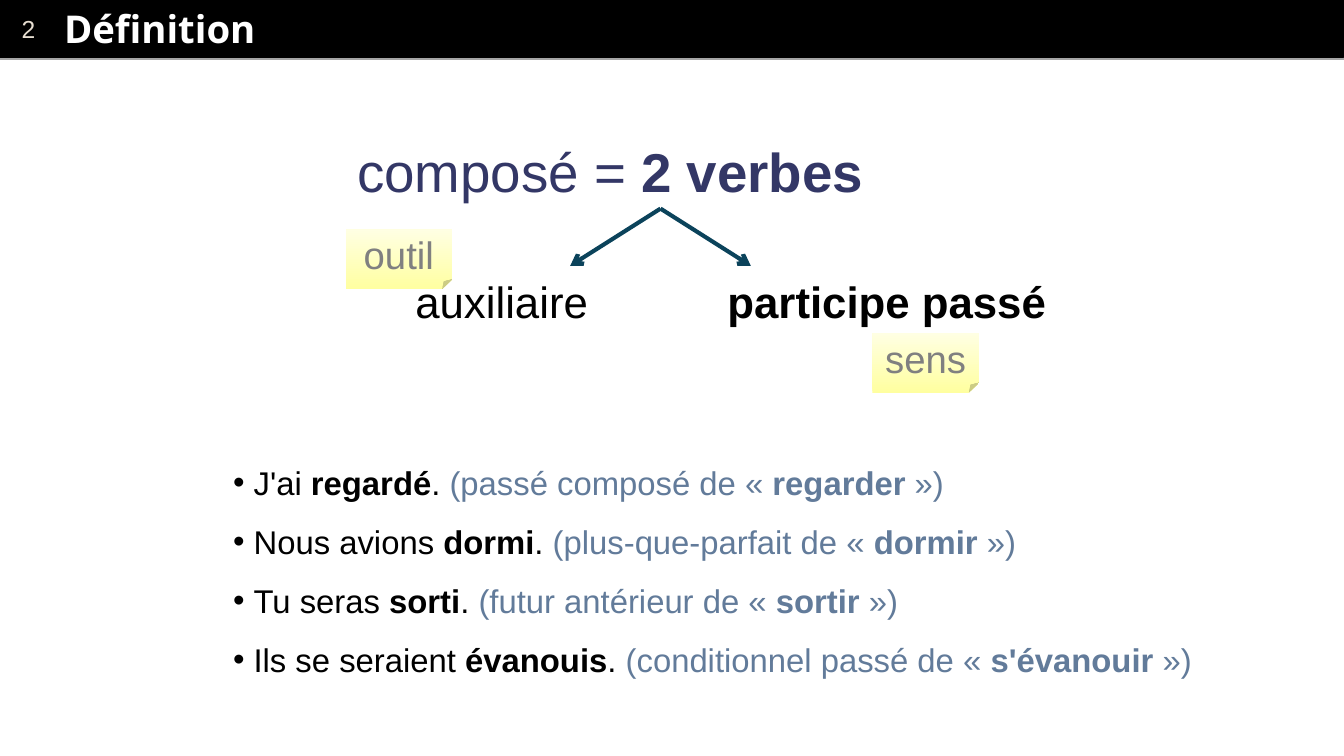
from dataclasses import dataclass

from lxml.etree import SubElement
from pptx import Presentation
from pptx.dml.color import RGBColor
from pptx.enum.shapes import MSO_CONNECTOR, MSO_SHAPE
from pptx.enum.text import MSO_ANCHOR, PP_ALIGN
from pptx.oxml.ns import qn
from pptx.util import Pt

TITLE = "Définition"
PAGE_NUMBER = "2"
FORMULA = [("composé = ", False), ("2 verbes", True)]
BRANCHES = [("auxiliaire", False, 296.6, 142), ("participe passé", True, 524.9, 249)]
NOTES = [("sens", 637.9, 243.4), ("outil", 252.7, 167.8)]
EXAMPLES = [
    ("J'ai ", "regardé", "passé composé", "regarder"),
    ("Nous avions ", "dormi", "plus-que-parfait", "dormir"),
    ("Tu seras ", "sorti", "futur antérieur", "sortir"),
    ("Ils se seraient ", "évanouis", "conditionnel passé", "s'évanouir"),
]
SLIDE_WIDTH, SLIDE_HEIGHT = 982.8, 553
BAR_HEIGHT = 41.8
FORK_X, FORK_TOP, FORK_BOTTOM, FORK_REACH = 483, 152.6, 194.4, 66
NOTE_SIZE = (77.8, 43.9)
BULLET_INDENT = 15


@dataclass(frozen=True)
class Theme:
    """Colours, fonts and type sizes of the slide."""

    black: str = "000000"
    white: str = "FFFFFF"
    number: str = "E7DED1"
    rule: str = "A6A6A6"
    formula: str = "333766"
    arrow: str = "0B435B"
    note_text: str = "808080"
    note_dark: str = "FFFFA0"
    note_light: str = "FFFFE3"
    comment: str = "627B9A"
    body_font: str = "Arial"
    title_font: str = "Open Sans"
    number_size: int = 18
    example_size: int = 24
    title_size: int = 28
    note_size: int = 28
    branch_size: int = 32
    formula_size: int = 40


THEME = Theme()


def rgb(value):
    """Turn a hexadecimal value into a colour."""
    return RGBColor.from_string(value)


def format_font(font, size, color, bold=False, name=THEME.body_font):
    """Set the face, size, colour and weight of a font."""
    font.name, font.size, font.bold = name, Pt(size), bold
    font.color.rgb = rgb(color)


def add_run(paragraph, text, size, color, bold=False):
    """Append a formatted run to a paragraph."""
    run = paragraph.add_run()
    run.text = text
    format_font(run.font, size, color, bold)


def add_text_box(slide, left, top, width, height, wrap=True):
    """Add a text box and return its text frame."""
    frame = slide.shapes.add_textbox(Pt(left), Pt(top), Pt(width), Pt(height)).text_frame
    frame.word_wrap = wrap
    return frame


def add_line(slide, start, end, color, width, arrow=False):
    """Add a straight line, with an arrowhead if wanted."""
    points = [Pt(value) for value in (*start, *end)]
    connector = slide.shapes.add_connector(MSO_CONNECTOR.STRAIGHT, *points)
    connector.line.color.rgb = rgb(color)
    connector.line.width = Pt(width)
    if arrow:
        SubElement(connector.line._get_or_add_ln(), qn("a:tailEnd"), type="arrow")
    SubElement(connector.element.spPr, qn("a:effectLst"))
    return connector


def add_header(slide):
    """Draw the black bar with the page number and the title."""
    bar = slide.shapes.add_shape(MSO_SHAPE.RECTANGLE, 0, 0, Pt(SLIDE_WIDTH), Pt(BAR_HEIGHT))
    bar.shadow.inherit = False
    bar.fill.solid()
    bar.fill.fore_color.rgb = rgb(THEME.black)
    bar.line.color.rgb = rgb(THEME.black)
    bar.line.width = Pt(0.75)
    frame = bar.text_frame
    frame.margin_left = Pt(15.8)
    frame.vertical_anchor = MSO_ANCHOR.MIDDLE
    frame.text = PAGE_NUMBER
    frame.paragraphs[0].alignment = PP_ALIGN.LEFT
    format_font(frame.paragraphs[0].runs[0].font, THEME.number_size, THEME.number)
    rule = add_line(slide, (0, 43.2), (SLIDE_WIDTH, 43.2), THEME.rule, 2)

    title = slide.shapes.title
    title.left, title.top, title.width, title.height = Pt(44), Pt(0.7), Pt(925), Pt(40.3)
    frame = title.text_frame
    frame.text = TITLE
    frame.margin_left = frame.margin_right = frame.margin_top = frame.margin_bottom = Pt(2.9)
    frame.vertical_anchor = MSO_ANCHOR.MIDDLE
    frame.paragraphs[0].alignment = PP_ALIGN.LEFT
    format_font(frame.paragraphs[0].runs[0].font, THEME.title_size, THEME.white, True,
                THEME.title_font)
    rule.element.addnext(title.element)


def add_diagram(slide):
    """Draw the formula and its two branches."""
    paragraph = add_text_box(slide, 254, 97, 420, 54).paragraphs[0]
    for text, bold in FORMULA:
        add_run(paragraph, text, THEME.formula_size, THEME.formula, bold)
    for side in (-1, 1):
        add_line(slide, (FORK_X, FORK_TOP), (FORK_X + side * FORK_REACH, FORK_BOTTOM),
                 THEME.arrow, 3, arrow=True)
    for text, bold, left, width in BRANCHES:
        frame = add_text_box(slide, left, 197.3, width, 46, wrap=False)
        add_run(frame.paragraphs[0], text, THEME.branch_size, THEME.black, bold)


def add_note(slide, text, left, top):
    """Draw a yellow sticky note."""
    width, height = NOTE_SIZE
    note = slide.shapes.add_shape(MSO_SHAPE.FOLDED_CORNER, Pt(left), Pt(top), Pt(width), Pt(height))
    note.shadow.inherit = False
    note.line.fill.background()
    note.fill.gradient()
    note.fill.gradient_angle = 90
    for stop, color in zip(note.fill.gradient_stops, (THEME.note_dark, THEME.note_light)):
        stop.color.rgb = rgb(color)
    frame = note.text_frame
    frame.text = text
    frame.vertical_anchor = MSO_ANCHOR.MIDDLE
    frame.paragraphs[0].alignment = PP_ALIGN.CENTER
    format_font(frame.paragraphs[0].runs[0].font, THEME.note_size, THEME.note_text)


def add_examples(slide):
    """Write the bulleted example sentences."""
    frame = add_text_box(slide, 163.4, 320.4, 723, 176.4)
    for index, (opening, participle, tense, infinitive) in enumerate(EXAMPLES):
        paragraph = frame.add_paragraph() if index else frame.paragraphs[0]
        paragraph.line_spacing = 1.5
        properties = paragraph._p.get_or_add_pPr()
        properties.set("marL", str(Pt(BULLET_INDENT)))
        properties.set("indent", str(-Pt(BULLET_INDENT)))
        SubElement(properties, qn("a:buFont"), typeface=THEME.body_font)
        SubElement(properties, qn("a:buChar"), char="•")
        for text, color, bold in (
            (opening, THEME.black, False),
            (participle, THEME.black, True),
            (". ", THEME.black, False),
            (f"({tense} de « ", THEME.comment, False),
            (infinitive, THEME.comment, True),
            (" »)", THEME.comment, False),
        ):
            add_run(paragraph, text, THEME.example_size, color, bold)


def main():
    """Build the slide and save it."""
    presentation = Presentation()
    presentation.slide_width, presentation.slide_height = Pt(SLIDE_WIDTH), Pt(SLIDE_HEIGHT)
    slide = presentation.slides.add_slide(presentation.slide_layouts[5])
    add_header(slide)
    add_diagram(slide)
    for note in NOTES:
        add_note(slide, *note)
    add_examples(slide)
    presentation.save("out.pptx")


if __name__ == "__main__":
    main()
